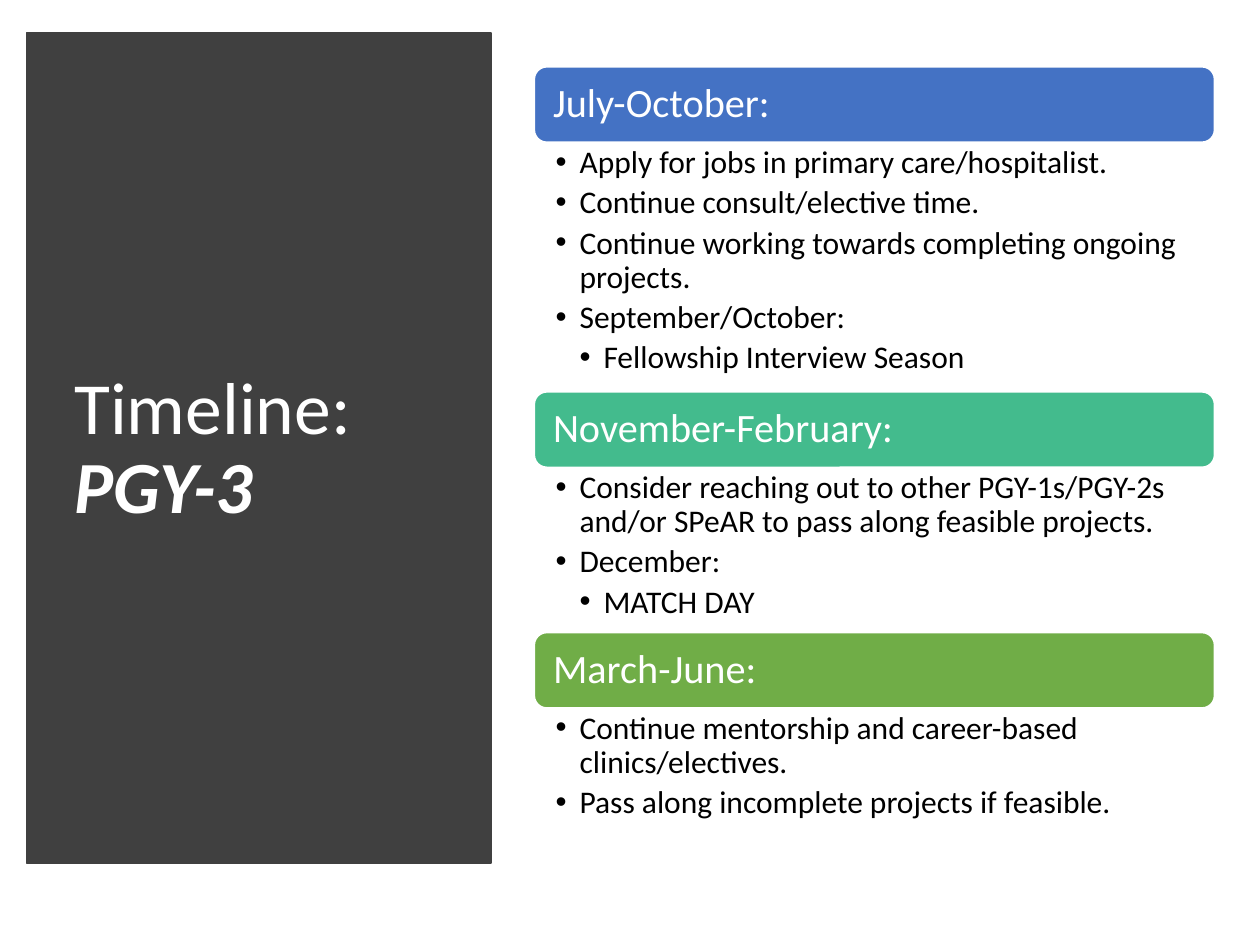
from lxml.etree import SubElement
from pptx import Presentation
from pptx.dml.color import RGBColor
from pptx.enum.shapes import MSO_SHAPE
from pptx.enum.text import MSO_ANCHOR, MSO_AUTO_SIZE, PP_ALIGN
from pptx.oxml.ns import qn
from pptx.util import Inches, Pt

COLUMNS, ROWS = 100, 75
SECTION_LEFT, SECTION_WIDTH, HEADER_HEIGHT = 42.4, 54, 6
FIRST_SECTION_TOP = 5.3

# Heading, colour, height of the list in rows, (level, text) of each bullet
SECTIONS = [
    ("July-October:", "4472C4", 19.8, [
        (1, "Apply for jobs in primary care/hospitalist."),
        (1, "Continue consult/elective time."),
        (1, "Continue working towards completing ongoing projects."),
        (1, "September/October:"),
        (2, "Fellowship Interview Season"),
    ]),
    ("November-February:", "43BB8D", 13.1, [
        (1, "Consider reaching out to other PGY-1s/PGY-2s and/or SPeAR "
            "to pass along feasible projects."),
        (1, "December:"),
        (2, "MATCH DAY"),
    ]),
    ("March-June:", "70AD47", 9.6, [
        (1, "Continue mentorship and career-based clinics/electives."),
        (1, "Pass along incomplete projects if feasible."),
    ]),
]


def color(hex_string):
    return RGBColor.from_string(hex_string)


class TimelineSlide:
    font_name = "Calibri"
    light, dark, panel_color = "FFFFFF", "000000", "404040"
    bullet_indent = Inches(0.19)

    def __init__(self, presentation):
        self.column = presentation.slide_width / COLUMNS
        self.row = presentation.slide_height / ROWS
        self.slide = presentation.slides.add_slide(presentation.slide_layouts[5])

    def box(self, left, top, width, height):
        """Turn grid units into slide lengths."""
        return (round(left * self.column), round(top * self.row),
                round(width * self.column), round(height * self.row))

    def style(self, paragraph, size, text_color, space_after=0):
        paragraph.alignment = PP_ALIGN.LEFT
        paragraph.line_spacing = 0.9
        paragraph.space_before = Pt(0)
        paragraph.space_after = Pt(space_after)
        paragraph.font.name = self.font_name
        paragraph.font.size = Pt(size)
        paragraph.font.color.rgb = color(text_color)

    def margins(self, frame, left, top, right, bottom):
        frame.word_wrap = True
        frame.margin_left, frame.margin_top = Inches(left), Inches(top)
        frame.margin_right, frame.margin_bottom = Inches(right), Inches(bottom)

    def block(self, kind, position, fill, line, line_width):
        shape = self.slide.shapes.add_shape(kind, *self.box(*position))
        shape.shadow.inherit = False
        shape.fill.solid()
        shape.fill.fore_color.rgb = color(fill)
        shape.line.color.rgb = color(line)
        shape.line.width = Pt(line_width)
        return shape

    def panel(self, *position):
        """Add the dark panel behind everything else."""
        shape = self.block(MSO_SHAPE.RECTANGLE, position,
                           self.panel_color, self.panel_color, 1)
        self.slide.shapes._spTree.insert(2, shape._element)

    def title(self, text, emphasis, *position):
        title = self.slide.shapes.title
        title.left, title.top, title.width, title.height = self.box(*position)
        frame = title.text_frame
        frame.auto_size = MSO_AUTO_SIZE.NONE
        frame.vertical_anchor = MSO_ANCHOR.MIDDLE
        self.margins(frame, 0.1, 0.05, 0.1, 0.05)
        paragraph = frame.paragraphs[0]
        paragraph.add_run().text = text
        run = paragraph.add_run()
        run.text = emphasis
        run.font.bold = run.font.italic = True
        self.style(paragraph, 42, self.light)

    def header(self, text, fill, *position):
        shape = self.block(MSO_SHAPE.ROUNDED_RECTANGLE, position, fill, self.light, 1)
        frame = shape.text_frame
        frame.vertical_anchor = MSO_ANCHOR.MIDDLE
        self.margins(frame, 0.12, 0.1, 0.12, 0.1)
        frame.text = text
        self.style(frame.paragraphs[0], 23, self.light)

    def bullets(self, items, *position):
        frame = self.slide.shapes.add_textbox(*self.box(*position)).text_frame
        self.margins(frame, 0.17, 0.03, 0.18, 0.03)
        for index, (level, text) in enumerate(items):
            paragraph = frame.add_paragraph() if index else frame.paragraphs[0]
            paragraph.text = text
            paragraph.level = level
            properties = paragraph._p.get_or_add_pPr()
            properties.set("marL", str(level * self.bullet_indent))
            properties.set("indent", str(-self.bullet_indent))
            SubElement(properties, qn("a:buFont")).set("typeface", "Arial")
            SubElement(properties, qn("a:buChar")).set("char", "•")
            self.style(paragraph, 18, self.dark, space_after=3.6)


def main():
    presentation = Presentation()
    presentation.slide_width, presentation.slide_height = Inches(10), Inches(7.5)
    timeline = TimelineSlide(presentation)
    timeline.panel(2.1, 2.6, 36.9, 65.9)
    timeline.title("Timeline: ", "PGY-3", 4.9, 7, 31.2, 57.5)
    top = FIRST_SECTION_TOP
    for heading, fill, list_height, items in SECTIONS:
        timeline.header(heading, fill, SECTION_LEFT, top, SECTION_WIDTH, HEADER_HEIGHT)
        top += HEADER_HEIGHT
        timeline.bullets(items, SECTION_LEFT, top, SECTION_WIDTH, list_height)
        top += list_height
    presentation.save("out.pptx")


if __name__ == "__main__":
    main()
